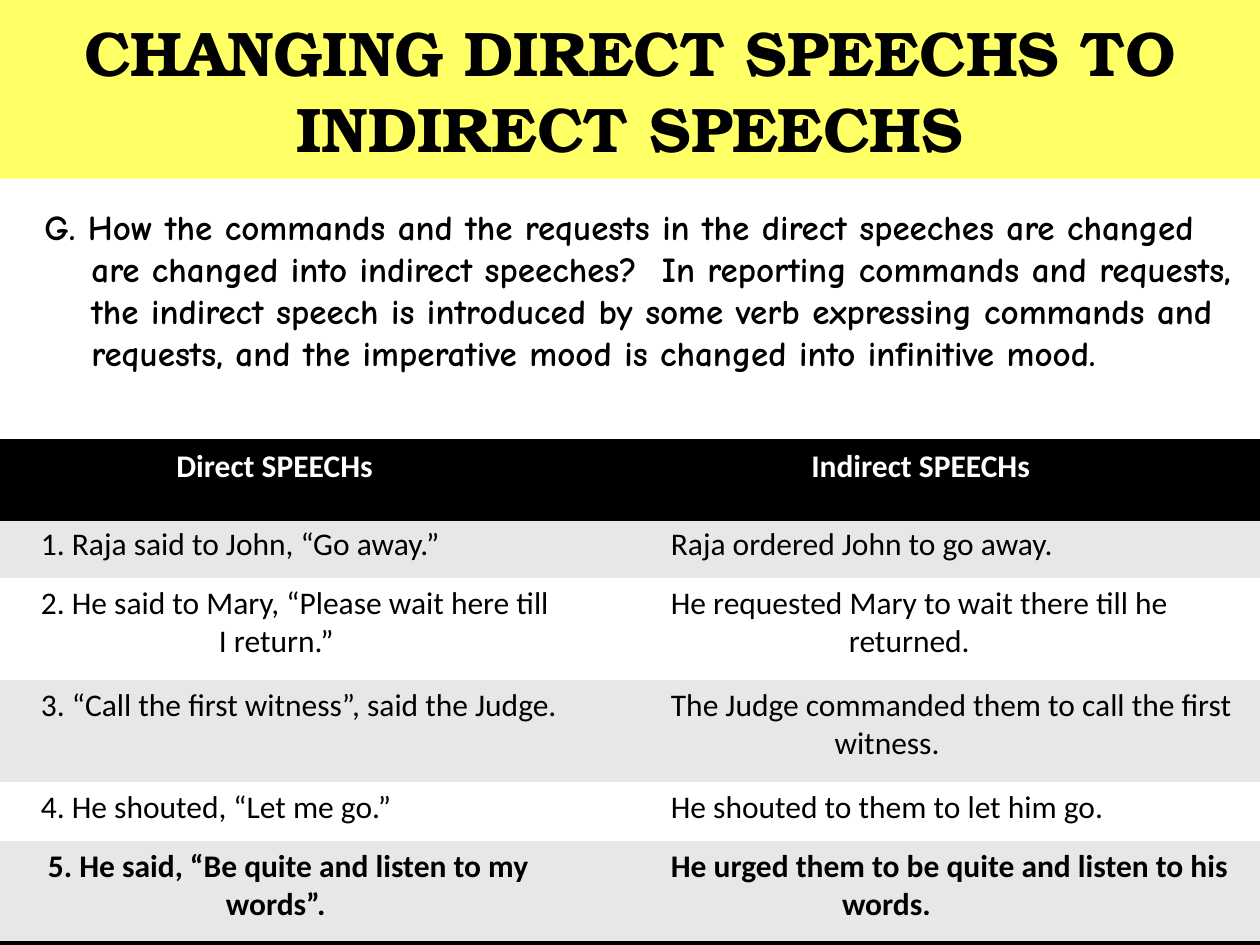
from pptx import Presentation, util as u
from pptx.dml.color import RGBColor
from pptx.enum import text as t
from pptx.oxml import parse_xml
from pptx.oxml.ns import nsdecls

YELLOW = RGBColor(0xFF, 0xFF, 0x66)
BLACK = RGBColor(0, 0, 0)
WHITE = RGBColor(0xFF, 0xFF, 0xFF)
GREY = RGBColor(0xE7, 0xE7, 0xE7)
PLAIN_STYLE = "{2D5ABB26-0587-4C30-8999-92F81FD0307C}"

TITLE = "CHANGING DIRECT SPEECHS TO INDIRECT SPEECHS"
RULE = (
    "G. How the commands and the requests in the direct speeches are changed "
    "are changed into indirect speeches?  In reporting commands and requests, "
    "the indirect speech is introduced by some verb expressing commands and "
    "requests, and the imperative mood is changed into infinitive mood."
)

# Each row: height in cm, then one list of (indent in cm, line) per cell
ROWS = [
    (1.58, [(3.3, "Direct SPEECHs")], [(3.4, "Indirect SPEECHs")]),
    (1.18, [(0.57, "1. Raja said to John, “Go away.”")],
     [(0.57, "Raja ordered John to go away.")]),
    (2.06, [(0.57, "2. He said to Mary, “Please wait here till"), (4.16, "I\u00a0return.”")],
     [(0.57, "He requested Mary to wait there till he"), (4.16, "returned.")]),
    (2.06, [(0.57, "3. “Call the first witness”, said the Judge.")],
     [(0.57, "The Judge commanded them to call the first"), (3.87, "witness.")]),
    (1.18, [(0.57, "4. He shouted, “Let me go.”")],
     [(0.57, "He shouted to them to let him go.")]),
    (2.06, [(0.71, "5. He said, “Be quite and listen to my"), (4.3, "words”.")],
     [(0.57, "He urged them to be quite and listen to his"), (4.02, "words.")]),
]


def write(para, words, font="Calibri", size=18, color=BLACK, bold=False, align=None,
          left=0, first=0):
    """Add words to para; left and first are its indents in cm."""
    span = para.add_run()
    span.text = words
    span.font.name = font
    span.font.size = u.Pt(size)
    span.font.bold = bold
    span.font.color.rgb = color
    para.alignment = align
    props = para._p.get_or_add_pPr()
    props.set("marL", str(u.Cm(left)))
    props.set("indent", str(u.Cm(first)))


def add_border(cell, side):
    cell._tc.get_or_add_tcPr().append(parse_xml(
        f'<a:{side} {nsdecls("a")} w="{u.Pt(2)}"><a:solidFill>'
        f'<a:srgbClr val="{BLACK}"/></a:solidFill></a:{side}>'))


class SpeechSlide:
    def __init__(self, deck):
        self.page = deck.slides.add_slide(deck.slide_layouts[1])
        self.title_font = "TeX Gyre Bonum"
        self.body_font = "Comic Neue"

    def place(self, box, left, top, width, height):
        box.left, box.top, box.width, box.height = map(u.Cm, (left, top, width, height))
        frame = box.text_frame
        frame.word_wrap = True
        frame.auto_size = t.MSO_AUTO_SIZE.NONE
        return frame

    def title(self, words):
        box = self.page.shapes.title
        box.fill.solid()
        box.fill.fore_color.rgb = YELLOW
        frame = self.place(box, 0, 0, 25.4, 3.6)
        frame.vertical_anchor = t.MSO_ANCHOR.MIDDLE
        write(frame.paragraphs[0], words, font=self.title_font, size=36, bold=True,
              align=t.PP_ALIGN.CENTER)

    def body(self, words):
        frame = self.place(self.page.placeholders[1], 0.64, 4.01, 24.76, 13)
        para = frame.paragraphs[0]
        write(para, words, font=self.body_font, size=20, bold=True, left=0.95, first=-0.95)
        para.space_before = u.Pt(4)
        para._p.pPr.append(parse_xml(f'<a:buNone {nsdecls("a")}/>'))

    def table(self, rows):
        height = sum(row[0] for row in rows)
        frame = self.page.shapes.add_table(
            len(rows), 2, 0, u.Cm(8.89), u.Cm(25.4), u.Cm(height))
        grid = frame.table
        grid._tbl.tblPr.find("{*}tableStyleId").text = PLAIN_STYLE
        last = len(rows) - 1
        for index, (row_height, *cells) in enumerate(rows):
            grid.rows[index].height = u.Cm(row_height)
            header = index == 0
            sides = ("lnT", "lnB") if header else ("lnB",) if index == last else ()
            for column, lines in enumerate(cells):
                cell = grid.cell(index, column)
                for side in sides:
                    add_border(cell, side)
                cell.fill.solid()
                cell.fill.fore_color.rgb = BLACK if header else GREY if index % 2 else WHITE
                for number, (indent, words) in enumerate(lines):
                    text_frame = cell.text_frame
                    para = text_frame.add_paragraph() if number else text_frame.paragraphs[0]
                    write(para, words, color=WHITE if header else BLACK,
                          bold=index in (0, last), left=indent)


def main():
    deck = Presentation()
    deck.slide_width, deck.slide_height = u.Cm(25.4), u.Cm(19.05)
    slide = SpeechSlide(deck)
    slide.title(TITLE)
    slide.body(RULE)
    slide.table(ROWS)
    deck.save("out.pptx")


if __name__ == "__main__":
    main()
